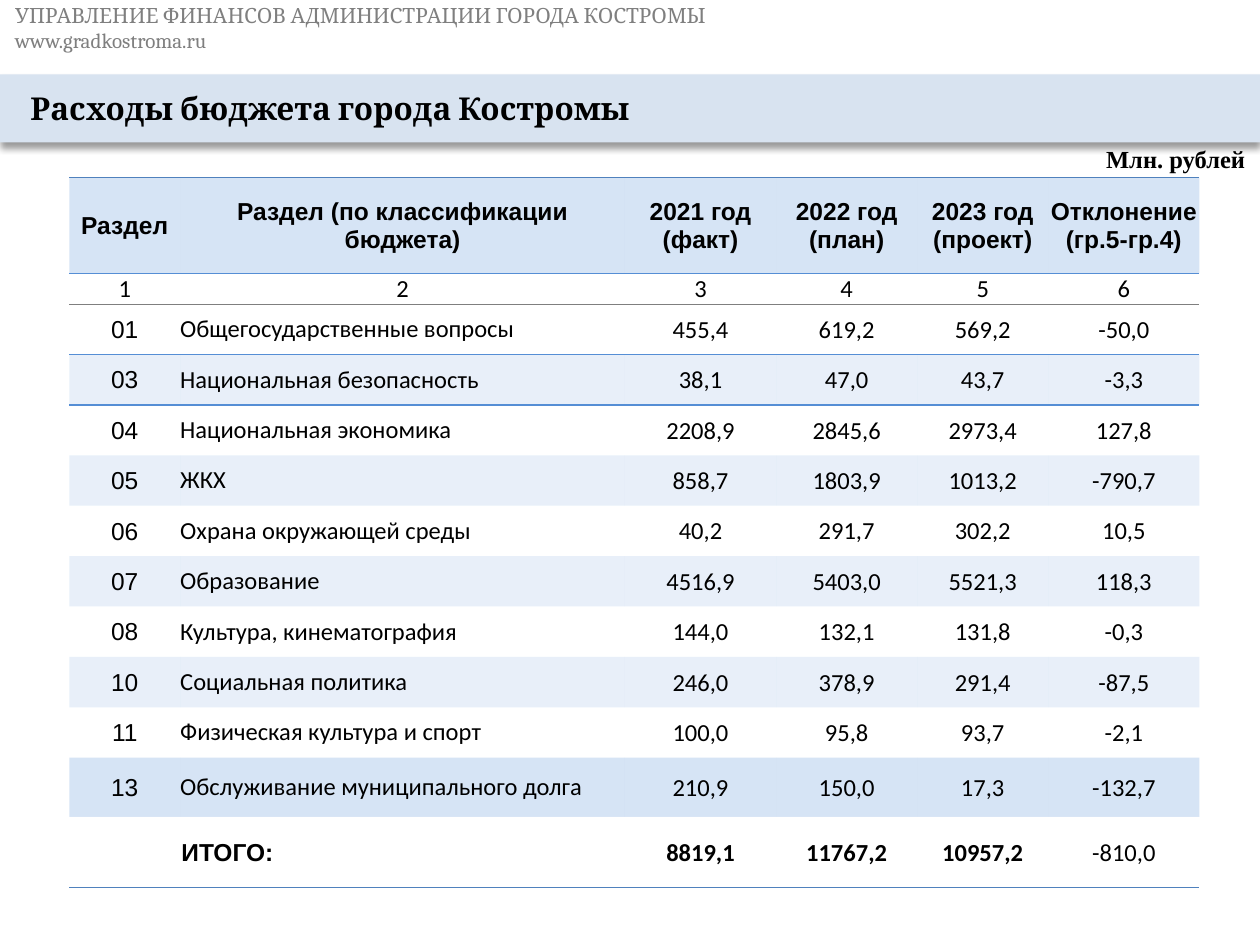
from dataclasses import dataclass
from typing import Optional

from lxml import etree
from pptx import Presentation
from pptx import util as u
from pptx.dml.color import RGBColor
from pptx.enum import text
from pptx.oxml import parse_xml
from pptx.oxml.ns import nsdecls, qn

BLACK, GREY, WHITE = "000000", "7F7F7F", "FFFFFF"
BANNER, ROW_BLUE = "D8E3F0", "C6D9F1"
EDGE_BLUE, RULE_BLUE = "4F81BD", "558ED5"
PLAIN_TABLE_STYLE = "{2D5ABB26-0587-4C30-8999-92F81FD0307C}"
COLUMN_WIDTHS = (0.88, 3.53, 1.2, 1.12, 1.04, 1.2)
CENTER, LEFT = text.PP_ALIGN.CENTER, text.PP_ALIGN.LEFT


@dataclass
class Border:
    side: str
    color: str
    points: float = 1


@dataclass
class BudgetRow:
    cells: tuple[str, ...]
    height: float = 0.4
    fill: Optional[str] = None
    opacity: int = 100
    borders: tuple[Border, ...] = ()


@dataclass
class CellStyle:
    font: str = "Calibri"
    bold: bool = False
    align: text.PP_ALIGN = CENTER
    inset: float = 0.01


SECTIONS = (
    ("01", "Общегосударственные вопросы", "455,4", "619,2", "569,2", "-50,0"),
    ("03", "Национальная безопасность", "38,1", "47,0", "43,7", "-3,3"),
    ("04", "Национальная экономика", "2208,9", "2845,6", "2973,4", "127,8"),
    ("05", "ЖКХ", "858,7", "1803,9", "1013,2", "-790,7"),
    ("06", "Охрана окружающей среды", "40,2", "291,7", "302,2", "10,5"),
    ("07", "Образование", "4516,9", "5403,0", "5521,3", "118,3"),
    ("08", "Культура, кинематография", "144,0", "132,1", "131,8", "-0,3"),
    ("10", "Социальная политика", "246,0", "378,9", "291,4", "-87,5"),
    ("11", "Физическая культура и спорт", "100,0", "95,8", "93,7", "-2,1"),
    ("13", "Обслуживание муниципального долга", "210,9", "150,0", "17,3", "-132,7"),
)


def budget_rows() -> list[BudgetRow]:
    header = BudgetRow(
        ("Раздел", "Раздел (по классификации бюджета)", "2021 год\n(факт)",
         "2022 год\n(план)", "2023 год\n(проект)", "Отклонение\n(гр.5-гр.4)"),
        0.76, ROW_BLUE, 70, (Border("T", EDGE_BLUE), Border("B", RULE_BLUE)))
    numbers = BudgetRow(tuple("123456"), 0.24,
                        borders=(Border("T", RULE_BLUE), Border("B", GREY, 0.5)))
    sections = [BudgetRow(cells, fill=ROW_BLUE if index % 2 else None, opacity=40)
                for index, cells in enumerate(SECTIONS)]
    sections[0].borders = (Border("T", GREY, 0.5), Border("B", RULE_BLUE))
    sections[1].borders = (Border("T", RULE_BLUE),)
    sections[-1].height, sections[-1].opacity = 0.47, 70
    total = BudgetRow(("", "ИТОГО:", "8819,1", "11767,2", "10957,2", "-810,0"),
                      0.56, WHITE, 70, (Border("B", EDGE_BLUE),))
    return [header, numbers, *sections, total]


def cell_style(row: int, column: int, last_row: int) -> CellStyle:
    if row == 0:
        return CellStyle("Arial", True)
    if row == 1:
        return CellStyle(inset=0 if column in (1, 2, 4) else 0.01)
    if row == last_row:
        if column == 1:
            return CellStyle("Arial", True, LEFT)
        return CellStyle(bold=column < 5)
    if column == 1:
        return CellStyle(align=LEFT, inset=0)
    return CellStyle("Arial" if column == 0 else "Calibri")


def rgb(color: str) -> RGBColor:
    return RGBColor.from_string(color)


def add_run(paragraph, words: str, size: float, font: str,
            color: str = BLACK, bold: bool = False) -> None:
    run = paragraph.add_run()
    run.text = words
    run.font.size, run.font.name, run.font.bold = u.Pt(size), font, bold
    run.font.color.rgb = rgb(color)


def set_insets(frame, left: float, top: float, right: float, bottom: float) -> None:
    frame.margin_left, frame.margin_top = u.Inches(left), u.Inches(top)
    frame.margin_right, frame.margin_bottom = u.Inches(right), u.Inches(bottom)


def place(shape, left: float, top: float, width: float, height: float) -> None:
    shape.left, shape.top = u.Inches(left), u.Inches(top)
    shape.width, shape.height = u.Inches(width), u.Inches(height)


def add_title_banner(slide) -> None:
    title = slide.shapes.title
    place(title, 0, 0.59, 10, 0.54)
    title.fill.solid()
    title.fill.fore_color.rgb = rgb(BANNER)
    title._element.spPr.append(parse_xml(
        f'<a:effectLst {nsdecls("a")}><a:outerShdw blurRad="{u.Pt(4)}" dist="{u.Pt(3)}" '
        'dir="5400000" algn="t" rotWithShape="0"><a:srgbClr val="000000">'
        '<a:alpha val="40000"/></a:srgbClr></a:outerShdw></a:effectLst>'))
    frame = title.text_frame
    frame.auto_size = text.MSO_AUTO_SIZE.NONE
    frame.vertical_anchor = text.MSO_ANCHOR.MIDDLE
    set_insets(frame, 0.24, 0.12, 0.24, 0.12)
    frame.paragraphs[0].alignment = LEFT
    add_run(frame.paragraphs[0], "Расходы бюджета города Костромы", 18, "Cambria", bold=True)


def add_department(slide) -> None:
    box = slide.shapes.add_textbox(0, 0, u.Inches(10), u.Inches(0.44))
    frame = box.text_frame
    frame.word_wrap = True
    frame.vertical_anchor = text.MSO_ANCHOR.MIDDLE
    set_insets(frame, 0.12, 0.12, 0.12, 0.12)
    paragraph = frame.paragraphs[0]
    add_run(paragraph, "УПРАВЛЕНИЕ ФИНАНСОВ АДМИНИСТРАЦИИ ГОРОДА КОСТРОМЫ", 12, "Cambria", GREY)
    paragraph.add_line_break()
    add_run(paragraph, "www.gradkostroma.ru", 12, "Cambria", GREY)


def add_unit_label(slide) -> None:
    box = slide.shapes.add_textbox(*map(u.Inches, (8.68, 1.09, 1.32, 0.34)))
    box.text_frame.word_wrap = False
    add_run(box.text_frame.paragraphs[0], "Млн. рублей", 14, "Times New Roman", bold=True)


def paint_cell(cell, row: BudgetRow) -> None:
    """Fill the cell and draw its borders, which come before the fill in the XML."""
    properties = cell._tc.get_or_add_tcPr()
    if row.fill:
        cell.fill.solid()
        cell.fill.fore_color.rgb = rgb(row.fill)
        color = properties.find(f".//{qn('a:srgbClr')}")
        etree.SubElement(color, qn("a:alpha"), val=str(row.opacity * 1000))
    else:
        cell.fill.background()
    for index, border in enumerate(row.borders):
        properties.insert(index, parse_xml(
            f'<a:ln{border.side} {nsdecls("a")} w="{u.Pt(border.points)}"><a:solidFill>'
            f'<a:srgbClr val="{border.color}"/></a:solidFill></a:ln{border.side}>'))


def write_cell(cell, words: str, style: CellStyle) -> None:
    cell.vertical_anchor = text.MSO_ANCHOR.MIDDLE
    set_insets(cell, style.inset, style.inset, style.inset, 0)
    paragraph = cell.text_frame.paragraphs[0]
    paragraph.alignment = style.align
    if not words:
        return
    for index, line in enumerate(words.split("\n")):
        if index:
            paragraph.add_line_break()
        add_run(paragraph, line, 14, style.font, bold=style.bold)


def add_budget_table(slide) -> None:
    rows = budget_rows()
    table = slide.shapes.add_table(len(rows), len(COLUMN_WIDTHS),
                                   *map(u.Inches, (0.55, 1.41, 8.98, 5.63))).table
    table.first_row = table.horz_banding = False
    table._tbl.tblPr.find(qn("a:tableStyleId")).text = PLAIN_TABLE_STYLE
    for column, width in zip(table.columns, COLUMN_WIDTHS):
        column.width = u.Inches(width)
    for row_index, row in enumerate(rows):
        table.rows[row_index].height = u.Inches(row.height)
        for column_index, words in enumerate(row.cells):
            cell = table.cell(row_index, column_index)
            write_cell(cell, words, cell_style(row_index, column_index, len(rows) - 1))
            paint_cell(cell, row)


def main() -> None:
    presentation = Presentation()
    presentation.slide_width, presentation.slide_height = u.Inches(10), u.Inches(7.5)
    slide = presentation.slides.add_slide(presentation.slide_layouts[5])
    add_title_banner(slide)
    add_department(slide)
    add_unit_label(slide)
    add_budget_table(slide)
    presentation.save("out.pptx")


if __name__ == "__main__":
    main()
